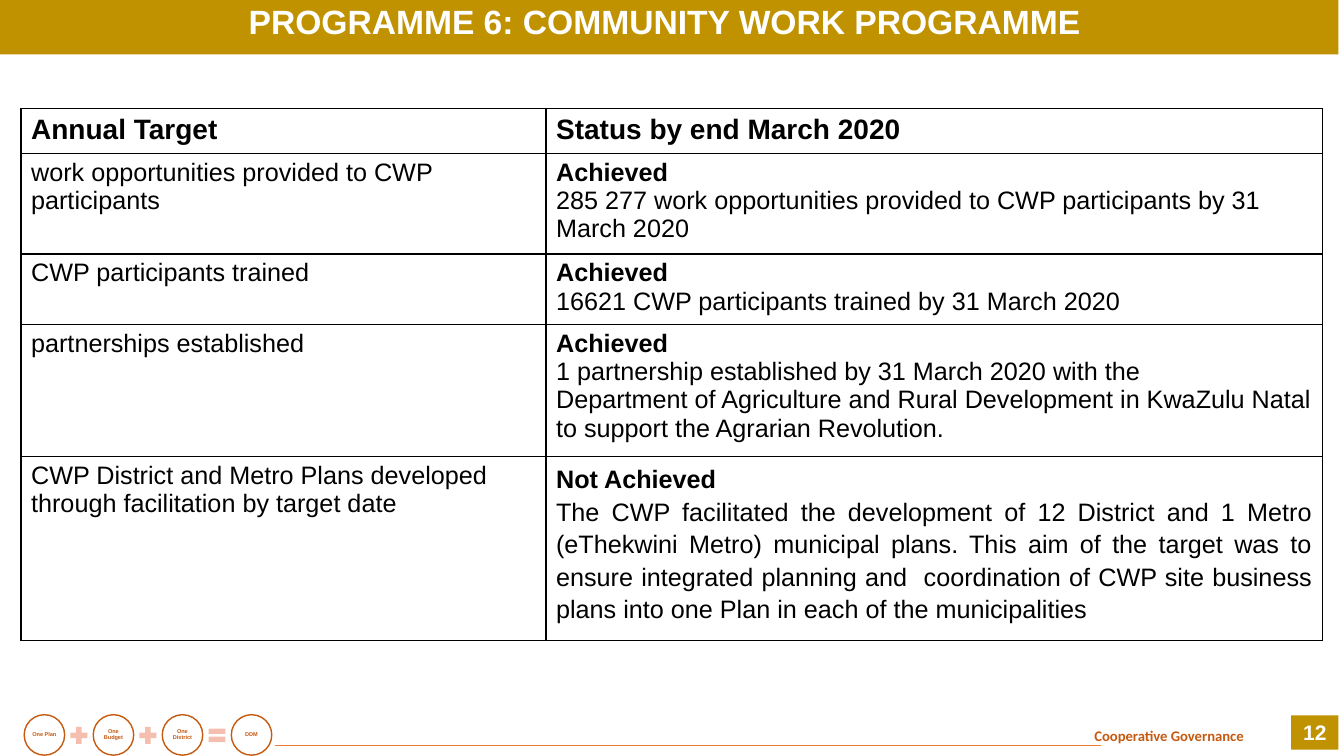
from lxml.etree import SubElement
from pptx import Presentation
from pptx.dml.color import RGBColor
from pptx.enum.shapes import MSO_CONNECTOR as Link, MSO_SHAPE as Shape
from pptx.enum.text import MSO_ANCHOR as Anchor, MSO_AUTO_SIZE as Fit, PP_ALIGN as Align
from pptx.oxml.ns import qn
from pptx.util import Cm, Pt

COLORS = {
    "gold": "C09200", "rust": "C55A11", "orange": "ED7D31",
    "pink": "F4BFAE", "white": "FFFFFF", "black": "000000",
}

ROWS = [
    (["Annual Target"], ["Status by end March 2020"]),
    (["work opportunities provided to CWP participants"],
     ["Achieved",
      "285 277 work opportunities provided to CWP participants by 31 March 2020"]),
    (["CWP participants trained"],
     ["Achieved", "16621 CWP participants trained by 31 March 2020"]),
    (["partnerships established"],
     ["Achieved",
      "1 partnership established by 31 March 2020 with the",
      "Department of Agriculture and Rural Development in KwaZulu Natal "
      "to support the Agrarian Revolution."]),
    (["CWP District and Metro Plans developed through facilitation by target date"],
     ["Not Achieved  ",
      "The CWP facilitated the development of 12 District and 1 Metro "
      "(eThekwini Metro) municipal plans. This aim of the target was to ensure "
      "integrated planning and  coordination of CWP site business plans into one "
      "Plan in each of the municipalities"]),
]
COL_WIDTHS = [13.23, 19.56]
ROW_HEIGHTS = [1.12, 2.54, 1.78, 3.33, 4.62]


def rgb(name):
    return RGBColor.from_string(COLORS[name])


class SlideBuilder:
    def __init__(self, prs, font="Arial"):
        self.s = prs.slides.add_slide(prs.slide_layouts[5])
        self.font = font

    def run(self, p, text, size, color, bold=True, align=None, spacing=None, font=None):
        p.alignment = align
        p.line_spacing = spacing
        r = p.add_run()
        r.text = text
        r.font.name = font or self.font
        r.font.size = Pt(size)
        r.font.bold = bold
        r.font.color.rgb = rgb(color)

    def title(self, text, x, y, w, h):
        sp = self.s.shapes.title
        sp.left, sp.top, sp.width, sp.height = Cm(x), Cm(y), Cm(w), Cm(h)
        sp.fill.solid()
        sp.fill.fore_color.rgb = rgb("gold")
        tf = sp.text_frame
        tf.auto_size = Fit.NONE
        tf.word_wrap = True
        tf.vertical_anchor = Anchor.TOP
        p = tf.paragraphs[0]
        p.space_before = Pt(7.5)
        self.run(p, text, 24, "white", align=Align.CENTER, spacing=0.9)

    def shape(self, kind, x, y, w, h, fill, line=None):
        sp = self.s.shapes.add_shape(kind, Cm(x), Cm(y), Cm(w), Cm(h))
        sp.shadow.inherit = False
        sp.fill.solid()
        sp.fill.fore_color.rgb = rgb(fill)
        if line:
            sp.line.color.rgb = rgb(line)
            sp.line.width = Pt(1)
        else:
            sp.line.fill.background()
        return sp

    def label(self, sp, text, size, color, margin=None, spacing=None):
        tf = sp.text_frame
        tf.word_wrap = True
        tf.vertical_anchor = Anchor.MIDDLE
        if margin is not None:
            tf.margin_left = tf.margin_right = Cm(margin)
            tf.margin_top = tf.margin_bottom = Cm(margin)
        self.run(tf.paragraphs[0], text, size, color, align=Align.CENTER, spacing=spacing)

    def text(self, text, x, y, w, h, size, color, font):
        tf = self.s.shapes.add_textbox(Cm(x), Cm(y), Cm(w), Cm(h)).text_frame
        tf.word_wrap = True
        self.run(tf.paragraphs[0], text, size, color, font=font)

    def line(self, x1, x2, y, color):
        c = self.s.shapes.add_connector(Link.STRAIGHT, Cm(x1), Cm(y), Cm(x2), Cm(y))
        c.line.color.rgb = rgb(color)
        c.line.width = Pt(0.5)
        SubElement(c._element.spPr, qn("a:effectLst"))

    def borders(self, cell):
        tc_pr = cell._tc.get_or_add_tcPr()
        for side in ("a:lnL", "a:lnR", "a:lnT", "a:lnB"):
            ln = SubElement(tc_pr, qn(side), w=str(Pt(1)))
            fill = SubElement(ln, qn("a:solidFill"))
            SubElement(fill, qn("a:srgbClr"), val=COLORS["black"])

    def table(self, rows, x, y, widths, heights):
        table = self.s.shapes.add_table(
            len(rows), len(widths), Cm(x), Cm(y), Cm(sum(widths)), Cm(sum(heights))).table
        table.first_row = table.horz_banding = False
        for col, width in zip(table.columns, widths):
            col.width = Cm(width)
        for i, (row, height) in enumerate(zip(rows, heights)):
            table.rows[i].height = Cm(height)
            for j, lines in enumerate(row):
                cell = table.cell(i, j)
                self.borders(cell)
                cell.fill.background()
                last = i == len(rows) - 1 and j == 1
                tf = cell.text_frame
                for n, text in enumerate(lines):
                    p = tf.add_paragraph() if n else tf.paragraphs[0]
                    self.run(p, text, 18 if i else 20, "black",
                             bold=i == 0 or (j == 1 and n == 0),
                             align=Align.JUSTIFY if last else None,
                             spacing=1.15 if last else None)


def main():
    prs = Presentation()
    prs.slide_width, prs.slide_height = Cm(33.87), Cm(19.05)
    b = SlideBuilder(prs)
    b.title("PROGRAMME 6: COMMUNITY WORK PROGRAMME ", 0, 0, 33.73, 1.37)

    step = 1.74
    for i, name in enumerate(["One Plan", "One Budget", "One District", "DDM"]):
        circle = b.shape(Shape.OVAL, 0.61 + i * step, 18.01, 1.02, 1.02, "white", "rust")
        b.label(circle, name, 4, "rust", margin=0.03, spacing=0.9)
    for i, sign in enumerate([Shape.MATH_PLUS, Shape.MATH_PLUS, Shape.MATH_EQUAL]):
        b.shape(sign, 1.7 + i * step, 18.24, 0.58, 0.58, "pink")

    b.line(6.93, 27.74, 18.77, "orange")
    b.text("Cooperative Governance", 27.33, 18.19, 5, 0.74, 10.5, "rust", "Calibri")
    number = b.shape(Shape.RECTANGLE, 32.54, 18.03, 1.19, 0.86, "gold")
    b.label(number, "12", 15, "white")

    b.table(ROWS, 0.53, 2.74, COL_WIDTHS, ROW_HEIGHTS)
    prs.save("out.pptx")


if __name__ == "__main__":
    main()
